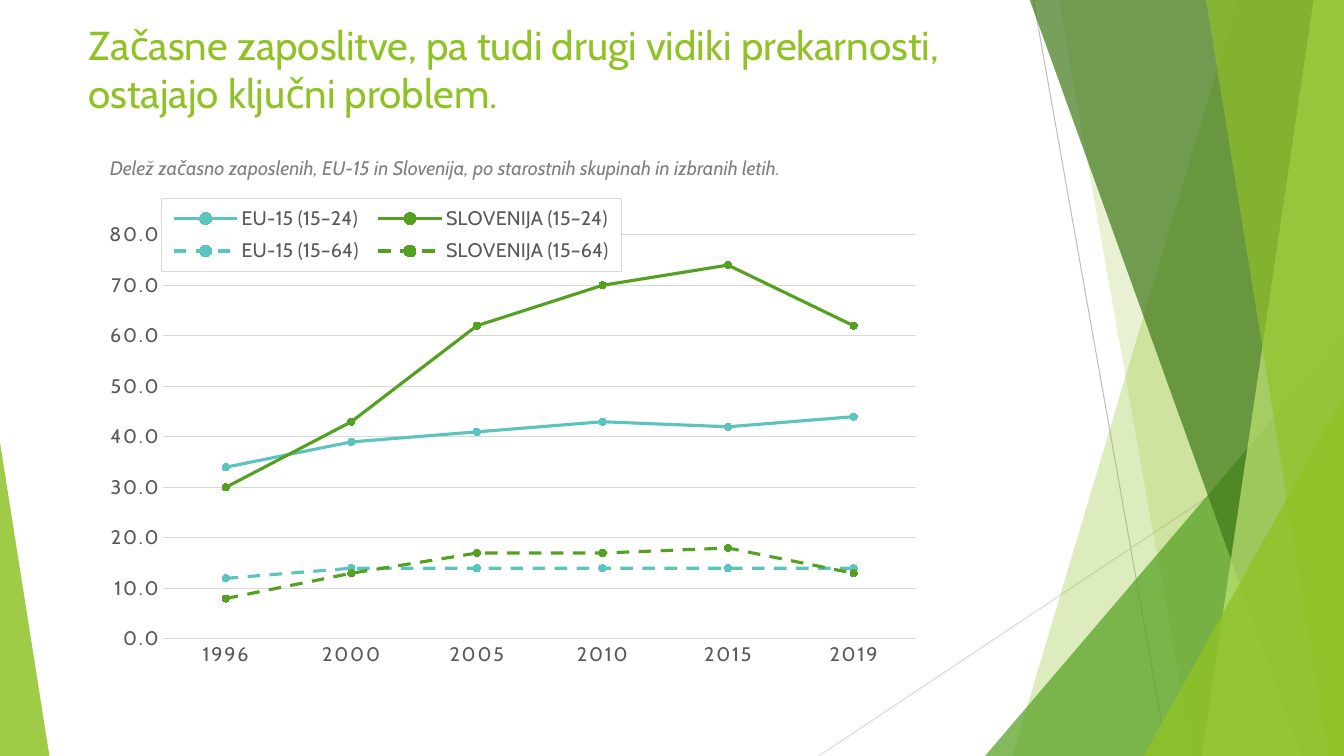
from lxml import etree
from pptx import Presentation
from pptx.chart.data import CategoryChartData
from pptx.dml.color import RGBColor
from pptx.enum.chart import XL_CHART_TYPE, XL_LEGEND_POSITION, XL_MARKER_STYLE, XL_TICK_MARK
from pptx.enum.dml import MSO_LINE
from pptx.enum.shapes import MSO_CONNECTOR, MSO_SHAPE
from pptx.oxml import parse_xml
from pptx.oxml.ns import nsdecls, qn
from pptx.util import Inches, Pt

FONT = "Cabin"
GREEN, DARK_GREEN, TEAL = "90C226", "54A021", "5BC4BE"
GRID_GRAY, LABEL_GRAY = "D9D9D9", "595959"
RIGHT, TOP, BOTTOM = 13.33, -0.01, 7.5

YEARS = ["1996", "2000", "2005", "2010", "2015", "2019"]
SERIES = [
    ("EU-15 (15–24)", [34, 39, 41, 43, 42, 44], TEAL, MSO_LINE.SOLID),
    ("SLOVENIJA (15–24)", [30, 43, 62, 70, 74, 62], DARK_GREEN, MSO_LINE.SOLID),
    ("EU-15 (15–64)", [12, 14, 14, 14, 14, 14], TEAL, MSO_LINE.DASH),
    ("SLOVENIJA (15–64)", [8, 13, 17, 17, 18, 13], DARK_GREEN, MSO_LINE.DASH),
]


def rgb(color):
    """Turn a hex string into a colour."""
    return RGBColor.from_string(color)


def set_line(line, color, width=0.75):
    """Give a line its colour and width."""
    line.color.rgb = rgb(color)
    line.width = Pt(width)


def set_fill(shape, color, opacity):
    """Fill a shape with a see-through colour, without outline or shadow."""
    shape.shadow.inherit = False
    shape.line.fill.background()
    shape.fill.solid()
    shape.fill.fore_color.rgb = rgb(color)
    color_element = shape.fill._xPr.find(".//" + qn("a:srgbClr"))
    etree.SubElement(color_element, qn("a:alpha"), val=str(opacity * 1000))


def add_thin_line(slide, start, end, color):
    """Draw a thin straight line between two points."""
    points = [Inches(value) for value in (*start, *end)]
    connector = slide.shapes.add_connector(MSO_CONNECTOR.STRAIGHT, *points)
    set_line(connector.line, color)
    etree.SubElement(connector._element.spPr, qn("a:effectLst"))


def add_band(slide, top_left, bottom_left, color, opacity):
    """Draw a slanted band that reaches to the right edge of the slide."""
    builder = slide.shapes.build_freeform(Inches(top_left), Inches(TOP))
    corners = [(RIGHT, TOP), (RIGHT, BOTTOM), (bottom_left, BOTTOM)]
    builder.add_line_segments([(Inches(x), Inches(y)) for x, y in corners], close=True)
    set_fill(builder.convert_to_shape(), color, opacity)


def add_triangle(slide, left, top, width, peak, color, opacity):
    """Draw a triangle that stands on the bottom edge of the slide."""
    triangle = slide.shapes.add_shape(
        MSO_SHAPE.ISOSCELES_TRIANGLE,
        Inches(left), Inches(top), Inches(width), Inches(BOTTOM - top))
    triangle.adjustments[0] = peak
    set_fill(triangle, color, opacity)


def add_text(slide, text, left, top, width, height, size, color, italic=False):
    """Add a wrapped text box with one paragraph."""
    box = slide.shapes.add_textbox(Inches(left), Inches(top), Inches(width), Inches(height))
    box.text_frame.word_wrap = True
    run = box.text_frame.paragraphs[0].add_run()
    run.text = text
    set_font(run.font, size, color)
    run.font.italic = italic


def set_font(font, size, color):
    """Give a font its typeface, size and colour."""
    font.name = FONT
    font.size = Pt(size)
    font.color.rgb = rgb(color)


def set_layout(element, inner, left, top, width, height):
    """Place the plot area or the legend by fractions of the chart."""
    for layout in element.findall(qn("c:layout")):
        element.remove(layout)
    target = '<c:layoutTarget val="inner"/>' if inner else ""
    sizes = zip("xywh", (left, top, width, height))
    values = "".join(f'<c:{name} val="{value}"/>' for name, value in sizes)
    layout = parse_xml(
        f'<c:layout {nsdecls("c")}><c:manualLayout>{target}'
        '<c:xMode val="edge"/><c:yMode val="edge"/>'
        f'{values}</c:manualLayout></c:layout>')
    element.insert(0 if inner else 1, layout)


def format_axis(axis):
    """Give an axis its label font and hide its tick marks."""
    axis.major_tick_mark = axis.minor_tick_mark = XL_TICK_MARK.NONE
    set_font(axis.tick_labels.font, 14, LABEL_GRAY)
    axis.tick_labels.font._element.set("spc", "120")


def add_legend(chart):
    """Add the framed legend over the top of the plot."""
    chart.has_legend = True
    legend = chart.legend
    legend.position = XL_LEGEND_POSITION.BOTTOM
    legend.include_in_layout = True
    set_font(legend.font, 14, LABEL_GRAY)
    set_layout(legend._element, False, 0.13, 0.01, 0.48, 0.15)
    frame = parse_xml(
        f'<c:spPr {nsdecls("c", "a")}><a:solidFill><a:srgbClr val="FFFFFF"/></a:solidFill>'
        f'<a:ln w="9525"><a:solidFill><a:srgbClr val="{GRID_GRAY}"/></a:solidFill></a:ln></c:spPr>')
    legend._element.find(qn("c:txPr")).addprevious(frame)


def add_employment_chart(slide):
    """Add the line chart of temporary employment shares."""
    data = CategoryChartData(number_format="#,##0.0")
    data.categories = YEARS
    for name, values, _, _ in SERIES:
        data.add_series(name, values)
    chart = slide.shapes.add_chart(
        XL_CHART_TYPE.LINE_MARKERS,
        Inches(0.36), Inches(1.92), Inches(9.52), Inches(4.82), data).chart
    set_font(chart.font, 14, "000000")
    chart.has_title = False
    plot = chart.plots[0]
    plot.vary_by_categories = False
    for series, (_, _, color, dash) in zip(plot.series, SERIES):
        series.smooth = False
        set_line(series.format.line, color, 2.25)
        series.format.line.dash_style = dash
        series.marker.style = XL_MARKER_STYLE.CIRCLE
        series.marker.size = 5
        series.marker.format.fill.solid()
        series.marker.format.fill.fore_color.rgb = rgb(color)
        set_line(series.marker.format.line, color)
    format_axis(chart.category_axis)
    set_line(chart.category_axis.format.line, GRID_GRAY)
    value_axis = chart.value_axis
    format_axis(value_axis)
    value_axis.minimum_scale, value_axis.maximum_scale, value_axis.major_unit = 0, 80, 10
    value_axis.tick_labels.number_format = "#,##0.0"
    value_axis.tick_labels.number_format_is_linked = False
    value_axis.format.line.fill.background()
    set_line(value_axis.major_gridlines.format.line, GRID_GRAY)
    set_layout(chart._chartSpace.chart.plotArea, True, 0.132, 0.085, 0.785, 0.832)
    add_legend(chart)


def add_decoration(slide):
    """Draw the green facets at both sides of the slide."""
    add_thin_line(slide, (10.25, 0), (11.58, BOTTOM), "BFBFBF")
    add_thin_line(slide, (RIGHT, 4.03), (8.12, BOTTOM), GRID_GRAY)
    add_band(slide, 12.28, 10.04, GREEN, 30)
    add_band(slide, 10.5, 11.83, GREEN, 20)
    add_triangle(slide, 9.77, 3.33, 3.56, 1, DARK_GREEN, 72)
    add_band(slide, 10.21, 12.91, "3F7819", 70)
    add_band(slide, 13.03, 11.92, "C0E474", 70)
    add_band(slide, 11.96, 13.18, GREEN, 65)
    add_triangle(slide, 11.34, 3.93, 1.99, 1, GREEN, 80)
    add_triangle(slide, 0, 4.39, 0.49, 0, GREEN, 85)


def main():
    """Build the slide and save it."""
    presentation = Presentation()
    presentation.slide_width, presentation.slide_height = Inches(RIGHT), Inches(BOTTOM)
    slide = presentation.slides.add_slide(presentation.slide_layouts[6])
    add_decoration(slide)
    add_text(slide, "Začasne zaposlitve, pa tudi drugi vidiki prekarnosti, ostajajo ključni problem.",
             0.78, 0.15, 9.49, 0.99, size=28.8, color=GREEN)
    add_employment_chart(slide)
    add_text(slide, "Delež začasno zaposlenih, EU-15 in Slovenija, po starostnih skupinah in izbranih letih.",
             0.99, 1.5, 8.12, 0.34, size=14, color="808080", italic=True)
    presentation.save("out.pptx")


if __name__ == "__main__":
    main()
